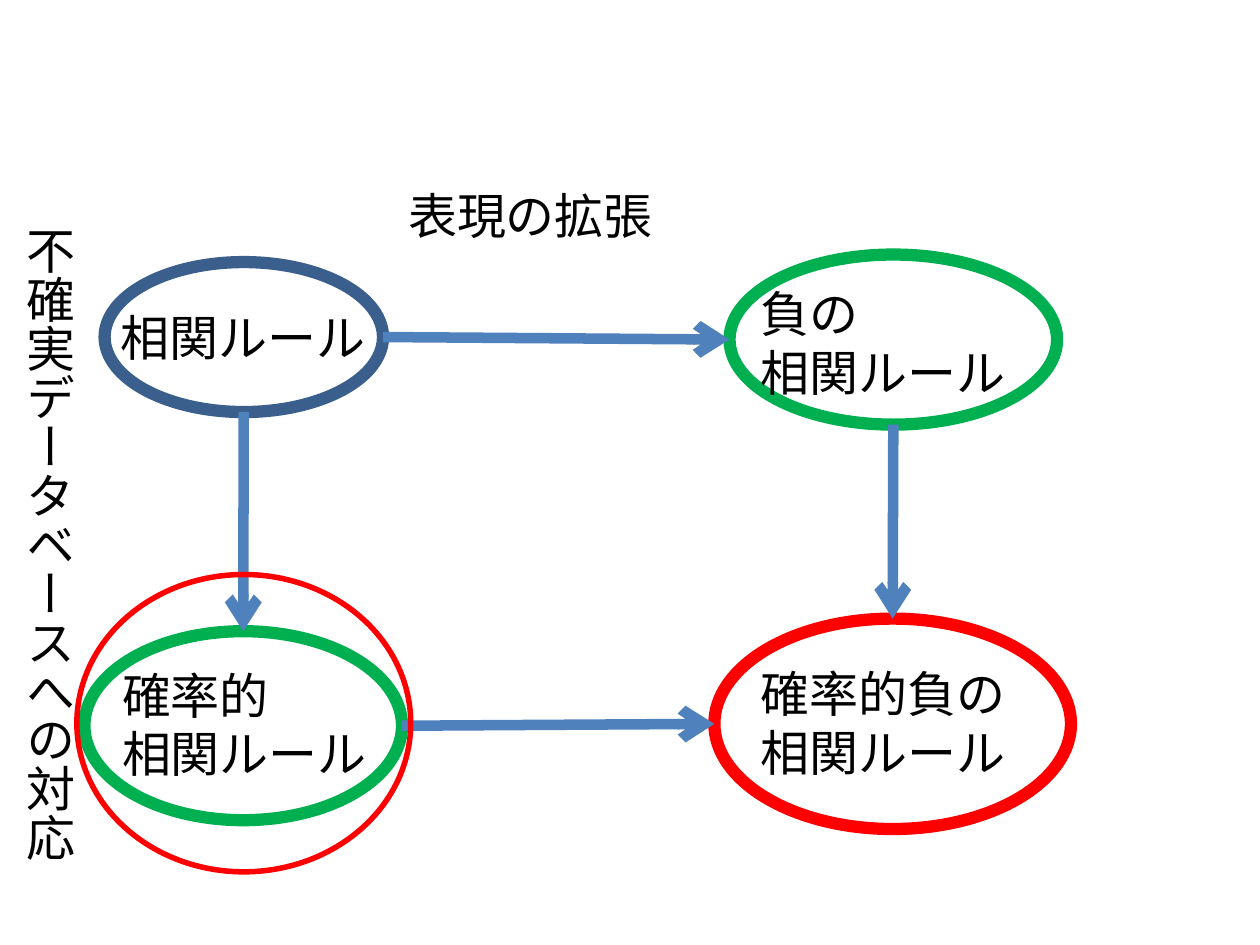
"""Build the slide on extending association rules."""
from pptx import Presentation
from pptx import util as u
from pptx.dml.color import RGBColor
from pptx.enum import shapes, text
from pptx.oxml.ns import qn
from lxml import etree

COLORS = {"white": "FFFFFF", "black": "000000", "navy": "3A5F8C",
          "green": "00B050", "red": "FF0000", "arrow": "4F81BD"}


def color(name):
    return RGBColor.from_string(COLORS[name])


def write(frame, content, font="Karla", size=28, ink="black", align=text.PP_ALIGN.LEFT):
    for index, line in enumerate(content.split("\n")):
        para = frame.paragraphs[0] if index == 0 else frame.add_paragraph()
        para.alignment = align
        span = para.add_run()
        span.text = line
        span.font.name = font
        span.font.size = u.Pt(size)
        span.font.color.rgb = color(ink)


class Diagram:
    def __init__(self, page):
        self.page = page
        self.ring_width = u.Pt(7)
        self.arrow_width = u.Pt(6)

    def ellipse(self, left, top, width, height, line, fill=None, weight=None):
        oval = self.page.shapes.add_shape(
            shapes.MSO_SHAPE.OVAL, *map(u.Inches, (left, top, width, height)))
        oval.shadow.inherit = False
        if fill:
            oval.fill.solid()
            oval.fill.fore_color.rgb = color(fill)
        else:
            oval.fill.background()
        oval.line.color.rgb = color(line)
        oval.line.width = weight or self.ring_width
        return oval

    def arrow(self, start, end):
        connector = self.page.shapes.add_connector(
            shapes.MSO_CONNECTOR.STRAIGHT, *start, *end)
        connector.line.color.rgb = color("arrow")
        connector.line.width = self.arrow_width
        etree.SubElement(connector.line._get_or_add_ln(), qn("a:tailEnd"), type="arrow")
        etree.SubElement(connector.element.spPr, qn("a:effectLst"))

    def arrow_right(self, source, target):
        self.arrow((source.left + source.width, source.top + source.height // 2),
                   (target.left, target.top + target.height // 2))

    def arrow_down(self, source, target):
        self.arrow((source.left + source.width // 2, source.top + source.height),
                   (target.left + target.width // 2, target.top))

    def label(self, content, left, top, width, height, vertical=False, **style):
        box = self.page.shapes.add_textbox(*map(u.Inches, (left, top, width, height)))
        frame = box.text_frame
        frame.word_wrap = True
        frame.auto_size = text.MSO_AUTO_SIZE.SHAPE_TO_FIT_TEXT
        if vertical:
            box.element.txBody.find(qn("a:bodyPr")).set("vert", "eaVert")
        write(frame, content, **style)


def main():
    deck = Presentation()
    deck.slide_width, deck.slide_height = u.Inches(10), u.Inches(7.5)
    diagram = Diagram(deck.slides.add_slide(deck.slide_layouts[6]))

    rule = diagram.ellipse(0.83, 2.08, 2.21, 1.19, "navy", "white")
    negative = diagram.ellipse(5.79, 2.02, 2.6, 1.35, "green", "white")
    probable = diagram.ellipse(0.67, 5.01, 2.52, 1.5, "green", "white")
    combined = diagram.ellipse(5.67, 4.91, 2.83, 1.67, "red", "white")

    diagram.arrow_down(rule, probable)
    diagram.arrow_right(rule, negative)
    diagram.arrow_down(negative, combined)
    diagram.arrow_right(probable, combined)

    center = text.PP_ALIGN.CENTER
    diagram.label("不確実データベースへの対応", 0, 1.7, 0.67, 5.31, vertical=True)
    diagram.label("表現の拡張", 2.44, 1.42, 3.54, 0.57, align=center)
    diagram.label("相関ルール", 0.7, 2.39, 2.46, 0.57, align=center)
    diagram.label("負の\n相関ルール", 5.94, 2.2, 2.36, 1.04)
    diagram.label("確率的\n相関ルール", 0.87, 5.23, 2.32, 1.04)
    diagram.label("確率的負の\n相関ルール", 5.94, 5.22, 2.59, 1.04)

    diagram.ellipse(0.61, 4.56, 2.65, 2.36, "red", weight=u.Pt(3.15))
    deck.save("out.pptx")


if __name__ == "__main__":
    main()
